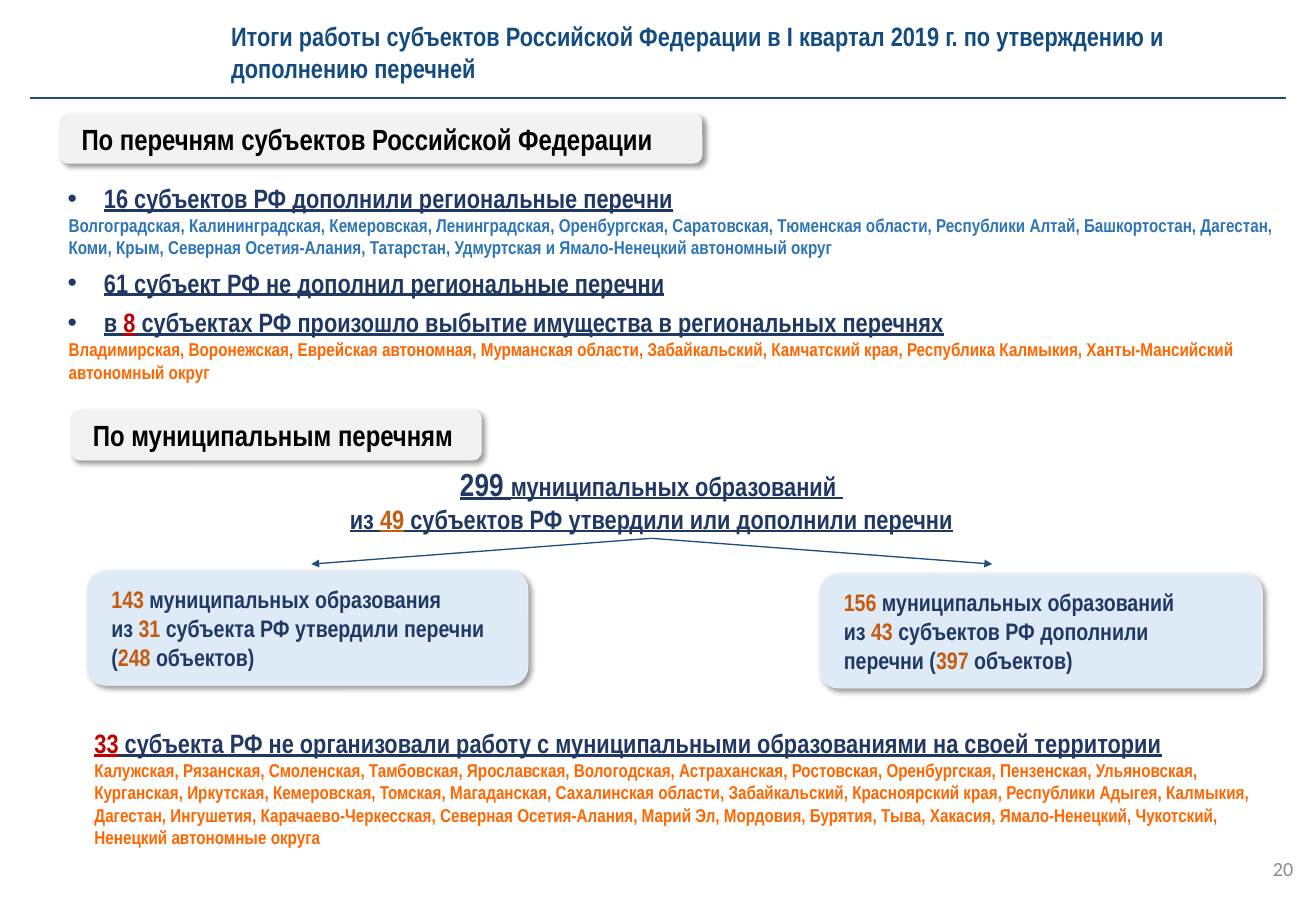
import pptx
import pptx.dml.color
import pptx.enum.shapes
import pptx.enum.text
import pptx.oxml
import pptx.oxml.ns
import pptx.util
from pptx.util import Inches

NAVY, BLUE, LINE = "203864", "2E75B6", "1F4E79"
ORANGE, BROWN, RED = "FF6600", "C55A11", "C00000"
GREY, PALE = "F2F2F2", "DEEBF7"
ALIGN = pptx.enum.text.PP_ALIGN
MIDDLE = pptx.enum.text.MSO_ANCHOR.MIDDLE
NS = pptx.oxml.ns.nsdecls("a")
SHADOW = (f'<a:outerShdw {NS} blurRad="50800" dist="38100" dir="2700000" algn="tl" rotWithShape="0">'
          '<a:srgbClr val="000000"><a:alpha val="40000"/></a:srgbClr></a:outerShdw>')


def rgb(code):
    return pptx.dml.color.RGBColor.from_string(code)


def write(tf, text, size=20, color=NAVY, accent=BROWN, font="Arial Narrow", bold=True,
          underline=False, align=ALIGN.LEFT, left=0.1, indent=0, bullet=False, before=0):
    """Add a paragraph; parts between asterisks take the accent colour."""
    p = tf.paragraphs[0]
    if p.runs:
        p = tf.add_paragraph()
        p.space_before = pptx.util.Pt(before)
    p.alignment = align
    pPr = p._p.get_or_add_pPr()
    pPr.set("marL", str(Inches(left)))
    pPr.set("indent", str(Inches(indent)))
    if bullet:
        pPr.append(pptx.oxml.parse_xml(f'<a:buFont {NS} typeface="Arial"/>'))
        pPr.append(pptx.oxml.parse_xml(f'<a:buChar {NS} char="•"/>'))
    for i, part in enumerate(text.split("*")):
        if part:
            r = p.add_run()
            r.text = part
            r.font.name, r.font.size = font, pptx.util.Pt(size)
            r.font.bold, r.font.underline = bold, underline
            r.font.color.rgb = rgb(accent if i % 2 else color)
    return p


prs = pptx.Presentation()
prs.slide_width, prs.slide_height = Inches(13.78), Inches(9.45)
s = prs.slides.add_slide(prs.slide_layouts[6])

# Text boxes
frames = {}
for name, box in {
    "number": (10.54, 8.85, 3.1, 0.5),
    "title": (2.36, 0.19, 11.23, 0.71),
    "total": (2.69, 4.82, 8.16, 0.84),
    "regions": (0.52, 1.86, 13.36, 2.22),
    "idle": (0.79, 7.57, 12.62, 1.38),
}.items():
    tf = s.shapes.add_textbox(*map(Inches, box)).text_frame
    tf.word_wrap = True
    frames[name] = tf

tf = frames["number"]
tf.vertical_anchor = MIDDLE
write(tf, "20", size=15.1, color="8C8C8C", font="Calibri", bold=False, align=ALIGN.RIGHT, left=0)

tf = frames["title"]
tf.vertical_anchor = MIDDLE
tf.margin_left, tf.margin_right = Inches(0.06), 0
tf.margin_top = tf.margin_bottom = Inches(0.03)
write(tf, "Итоги работы субъектов Российской Федерации в I квартал 2019 г. "
          "по утверждению и дополнению перечней", color="144C80", left=0)

tf = frames["total"]
p = write(tf, "*299 *муниципальных образований ", accent=NAVY, underline=True, align=ALIGN.CENTER)
p.runs[0].font.size = pptx.util.Pt(24)
write(tf, "из *49* субъектов РФ утвердили или дополнили перечни", underline=True, align=ALIGN.CENTER)

tf = frames["regions"]
for head, names, color in (
    ("16 субъектов РФ дополнили региональные перечни",
     "Волгоградская, Калининградская, Кемеровская, Ленинградская, Оренбургская, Саратовская, "
     "Тюменская области, Республики Алтай, Башкортостан, Дагестан, Коми, Крым, Северная Осетия-Алания, "
     "Татарстан, Удмуртская и Ямало-Ненецкий автономный округ", BLUE),
    ("61 субъект РФ не дополнил региональные перечни", "", NAVY),
    ("в *8* субъектах РФ произошло выбытие имущества в региональных перечнях",
     "Владимирская, Воронежская, Еврейская автономная, Мурманская области, Забайкальский, "
     "Камчатский края, Республика Калмыкия, Ханты-Мансийский автономный округ", ORANGE),
):
    write(tf, head, accent=RED, underline=True, left=0.47, indent=-0.38, bullet=True, before=6)
    if names:
        write(tf, names, size=14, color=color)

tf = frames["idle"]
write(tf, "*33* субъекта РФ не организовали работу с муниципальными образованиями на своей территории",
      accent=RED, underline=True)
for names in (
    "Калужская, Рязанская, Смоленская, Тамбовская, Ярославская, Вологодская, Астраханская, "
    "Ростовская, Оренбургская, Пензенская, Ульяновская,",
    "Курганская, Иркутская, Кемеровская, Томская, Магаданская, Сахалинская области, Забайкальский, "
    "Красноярский края, Республики Адыгея, Калмыкия,",
    "Дагестан, Ингушетия, Карачаево-Черкесская, Северная Осетия-Алания, Марий Эл, Мордовия, Бурятия, "
    "Тыва, Хакасия, Ямало-Ненецкий, Чукотский,",
    "Ненецкий автономные округа",
):
    write(tf, names, size=14, color=ORANGE, align=ALIGN.JUSTIFY)

# Section headings and result cards
for box, fill, size, color, lines in (
    ((0.63, 1.19, 6.72, 0.52), GREY, 22, "000000", ["По перечням субъектов Российской Федерации"]),
    ((0.75, 4.3, 4.29, 0.52), GREY, 22, "000000", ["По муниципальным перечням"]),
    ((0.91, 5.98, 4.62, 1.2), PALE, 18, NAVY,
     ["*143* муниципальных образования", "из *31* субъекта РФ утвердили перечни", "(*248* объектов)"]),
    ((8.58, 6.01, 4.64, 1.2), PALE, 18, NAVY,
     ["*156* муниципальных образований", "из *43* субъектов РФ дополнили", "перечни (*397* объектов)"]),
):
    sp = s.shapes.add_shape(pptx.enum.shapes.MSO_SHAPE.ROUNDED_RECTANGLE, *map(Inches, box))
    sp.fill.solid()
    sp.fill.fore_color.rgb = rgb(fill)
    sp.line.color.rgb = rgb(GREY)
    sp.line.width = pptx.util.Pt(0.5)
    sp.shadow.inherit = False
    sp._element.spPr.find(pptx.oxml.ns.qn("a:effectLst")).append(pptx.oxml.parse_xml(SHADOW))
    sp.text_frame.word_wrap = True
    sp.text_frame.vertical_anchor = MIDDLE
    for text in lines:
        write(sp.text_frame, text, size=size, color=color)

# Title rule and arrows to the cards
for ends, width, arrow in (
    ((0.31, 1.03, 13.47, 1.03), 1.75, False),
    ((6.82, 5.64, 3.26, 5.91), 1, True),
    ((6.82, 5.64, 10.39, 5.91), 1, True),
):
    line = s.shapes.add_connector(pptx.enum.shapes.MSO_CONNECTOR.STRAIGHT, *map(Inches, ends))
    line.line.color.rgb = rgb(LINE)
    line.line.width = pptx.util.Pt(width)
    if arrow:
        line.line._get_or_add_ln().append(pptx.oxml.parse_xml(f'<a:tailEnd {NS} type="triangle"/>'))
    line._element.spPr.append(pptx.oxml.parse_xml(f"<a:effectLst {NS}/>"))

prs.save("out.pptx")
